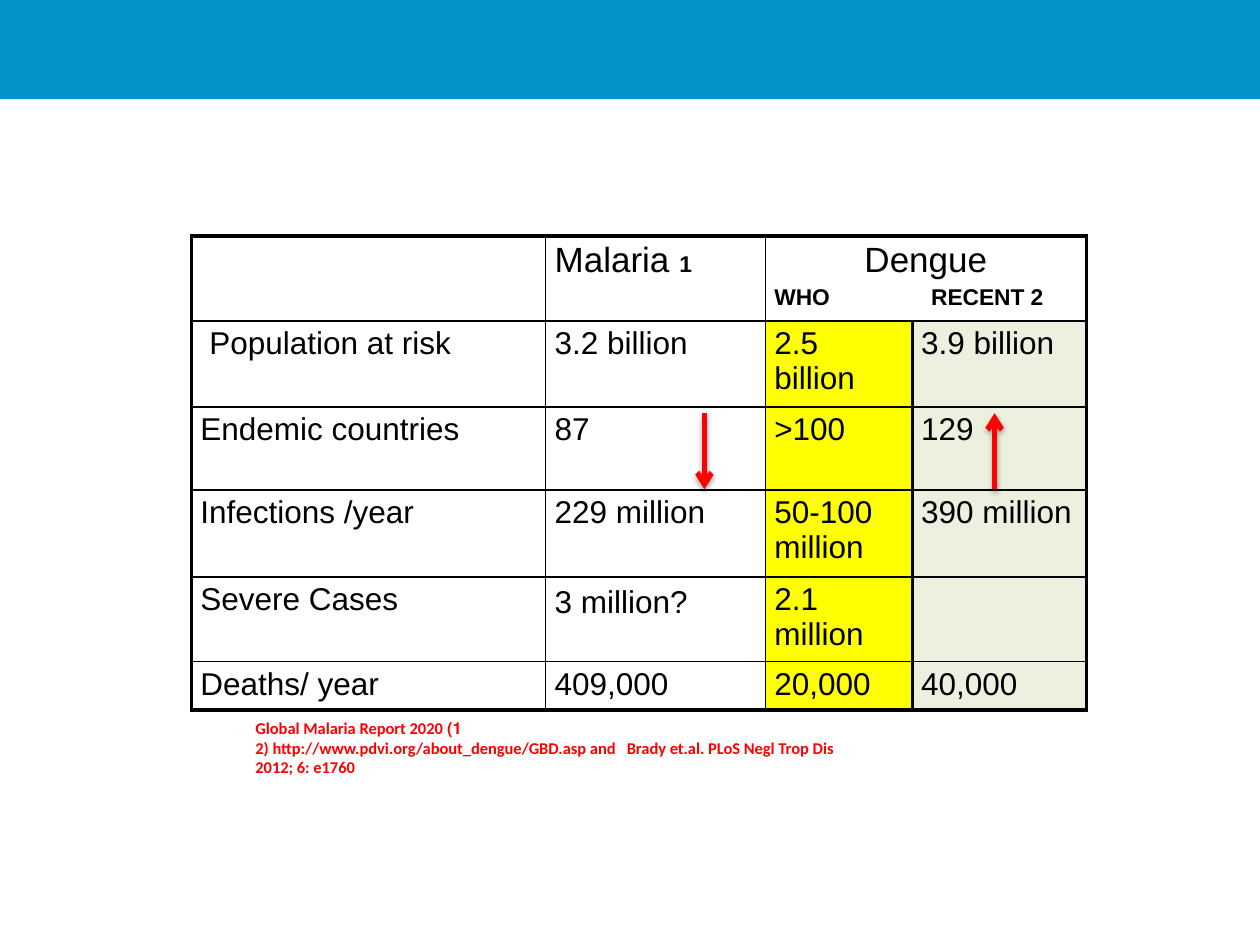
from lxml import etree
from pptx import Presentation
from pptx.dml.color import RGBColor
from pptx.enum.shapes import MSO_CONNECTOR, MSO_SHAPE
from pptx.enum.text import PP_ALIGN
from pptx.oxml.ns import qn
from pptx.util import Cm, Pt

STRAIGHT = MSO_CONNECTOR.STRAIGHT
RECTANGLE = MSO_SHAPE.RECTANGLE
LEFT, CENTER = PP_ALIGN.LEFT, PP_ALIGN.CENTER

BLACK, RED, BLUE = "000000", "FF0000", "0394CA"
COLUMN_FILLS = [None, None, "FFFF00", "EBF1DE"]
COLUMN_WIDTHS = [7.14, 4.43, 2.96, 3.51]
ROW_HEIGHTS = [1.71, 1.73, 1.68, 1.75, 1.71, 0.97]
THIN, THICK = 1, 2.25

HEADING = {"size": Pt(20), "name": "Arial", "bold": False}
SUBHEADING = {"size": Pt(13), "name": "Arial", "bold": True}
BODY = {"size": Pt(18), "name": "Arial", "bold": False}
SOURCE = {"size": Pt(9.4), "name": "Calibri", "bold": True}

BURDEN = [
    ["Population at risk", "3.2 billion", "2.5 billion", "3.9 billion"],
    ["Endemic countries", "87", ">100", "129"],
    ["Infections /year", "229 million", "50-100 million", "390 million"],
    ["Severe Cases", "3 million?", "2.1 million", ""],
    ["Deaths/ year", "409,000", "20,000", "40,000"],
]
SOURCES = (
    "1) Global Malaria Report 2020\v"
    "2) http://www.pdvi.org/about_dengue/GBD.asp and   "
    "Brady et.al. PLoS Negl Trop Dis 2012; 6: e1760"
)


def color(value):
    return RGBColor.from_string(value)


def add_element(parent, tag, **attributes):
    return etree.SubElement(parent, qn(tag), attributes)


def add_run(paragraph, text, style, ink=BLACK):
    run = paragraph.add_run()
    run.text = text
    for key, value in style.items():
        setattr(run.font, key, value)
    run.font.color.rgb = color(ink)


def add_banner(slide):
    banner = slide.shapes.add_shape(RECTANGLE, 0, 0, Cm(25.4), Cm(2))
    banner.shadow.inherit = False
    banner.fill.solid()
    banner.fill.fore_color.rgb = color(BLUE)
    banner.line.fill.background()


def add_border(properties, side, width):
    border = add_element(properties, f"a:ln{side}", w=str(Pt(width)))
    fill = add_element(border, "a:solidFill")
    add_element(fill, "a:srgbClr", val=BLACK)


def format_cell(cell, row, column):
    thick_sides = {
        "L": column == 0 or (column == 3 and row > 0),
        "R": column >= 2,
        "T": row == 0,
        "B": row == len(BURDEN),
    }
    properties = cell._tc.get_or_add_tcPr()
    for side, is_thick in thick_sides.items():
        add_border(properties, side, THICK if is_thick else THIN)
    cell.margin_left = cell.margin_right = Cm(0.18)
    cell.margin_top = cell.margin_bottom = Cm(0.1)
    fill = COLUMN_FILLS[column] if row else None
    if fill:
        cell.fill.solid()
        cell.fill.fore_color.rgb = color(fill)
    else:
        cell.fill.background()


def fill_header(table):
    malaria = table.cell(0, 1).text_frame.paragraphs[0]
    add_run(malaria, "Malaria ", HEADING)
    add_run(malaria, "1", SUBHEADING)

    dengue_cell = table.cell(0, 2)
    dengue_cell.merge(table.cell(0, 3))
    dengue = dengue_cell.text_frame.paragraphs[0]
    dengue.alignment = CENTER
    add_run(dengue, "Dengue", HEADING)

    estimates = dengue_cell.text_frame.add_paragraph()
    estimates.alignment = LEFT
    estimates.space_before = Pt(2.6)
    tabs = add_element(estimates._p.get_or_add_pPr(), "a:tabLst")
    add_element(tabs, "a:tab", pos=str(Cm(3.16)), algn="l")
    add_run(estimates, "WHO\tRECENT 2", SUBHEADING)


def add_burden_table(slide):
    table = slide.shapes.add_table(
        len(ROW_HEIGHTS), len(COLUMN_WIDTHS), Cm(3.86), Cm(4.76),
        Cm(sum(COLUMN_WIDTHS)), Cm(sum(ROW_HEIGHTS)),
    ).table
    table.first_row = table.horz_banding = False
    for column, width in zip(table.columns, COLUMN_WIDTHS):
        column.width = Cm(width)
    for row, height in zip(table.rows, ROW_HEIGHTS):
        row.height = Cm(height)
    for row in range(len(ROW_HEIGHTS)):
        for column in range(len(COLUMN_WIDTHS)):
            format_cell(table.cell(row, column), row, column)
    fill_header(table)
    for row, values in enumerate(BURDEN, start=1):
        for column, value in enumerate(values):
            if value:
                paragraph = table.cell(row, column).text_frame.paragraphs[0]
                add_run(paragraph, value, BODY)
    table.cell(1, 0).margin_left = Cm(0.36)
    table.cell(4, 1).margin_top = Cm(0.16)


def add_sources(slide):
    box = slide.shapes.add_textbox(Cm(4.9), Cm(14.35), Cm(12.85), Cm(1.32))
    box.text_frame.word_wrap = True
    paragraph = box.text_frame.paragraphs[0]
    paragraph.alignment = LEFT
    paragraph._p.get_or_add_pPr().set("rtl", "1")
    first, second = SOURCES.split("\v")
    add_run(paragraph, first, SOURCE, RED)
    paragraph.add_line_break()
    add_run(paragraph, second, SOURCE, RED)


def add_trend_arrow(slide, x, start, end):
    arrow = slide.shapes.add_connector(STRAIGHT, Cm(x), Cm(start), Cm(x), Cm(end))
    arrow.line.color.rgb = color(RED)
    arrow.line.width = Pt(3)
    add_element(arrow.line._get_or_add_ln(), "a:tailEnd", type="arrow")
    effects = add_element(arrow._element.spPr, "a:effectLst")
    shadow = add_element(
        effects, "a:outerShdw", blurRad=str(Pt(3.1)), dist=str(Pt(1.8)),
        dir="5400000", rotWithShape="0",
    )
    shade = add_element(shadow, "a:srgbClr", val=BLACK)
    add_element(shade, "a:alpha", val="35000")


def main():
    presentation = Presentation()
    presentation.slide_width = Cm(25.4)
    presentation.slide_height = Cm(19.05)
    slide = presentation.slides.add_slide(presentation.slide_layouts[6])
    add_banner(slide)
    add_burden_table(slide)
    add_sources(slide)
    add_trend_arrow(slide, 14.2, 8.33, 9.86)
    add_trend_arrow(slide, 20.05, 9.86, 8.33)
    presentation.save("out.pptx")


if __name__ == "__main__":
    main()
